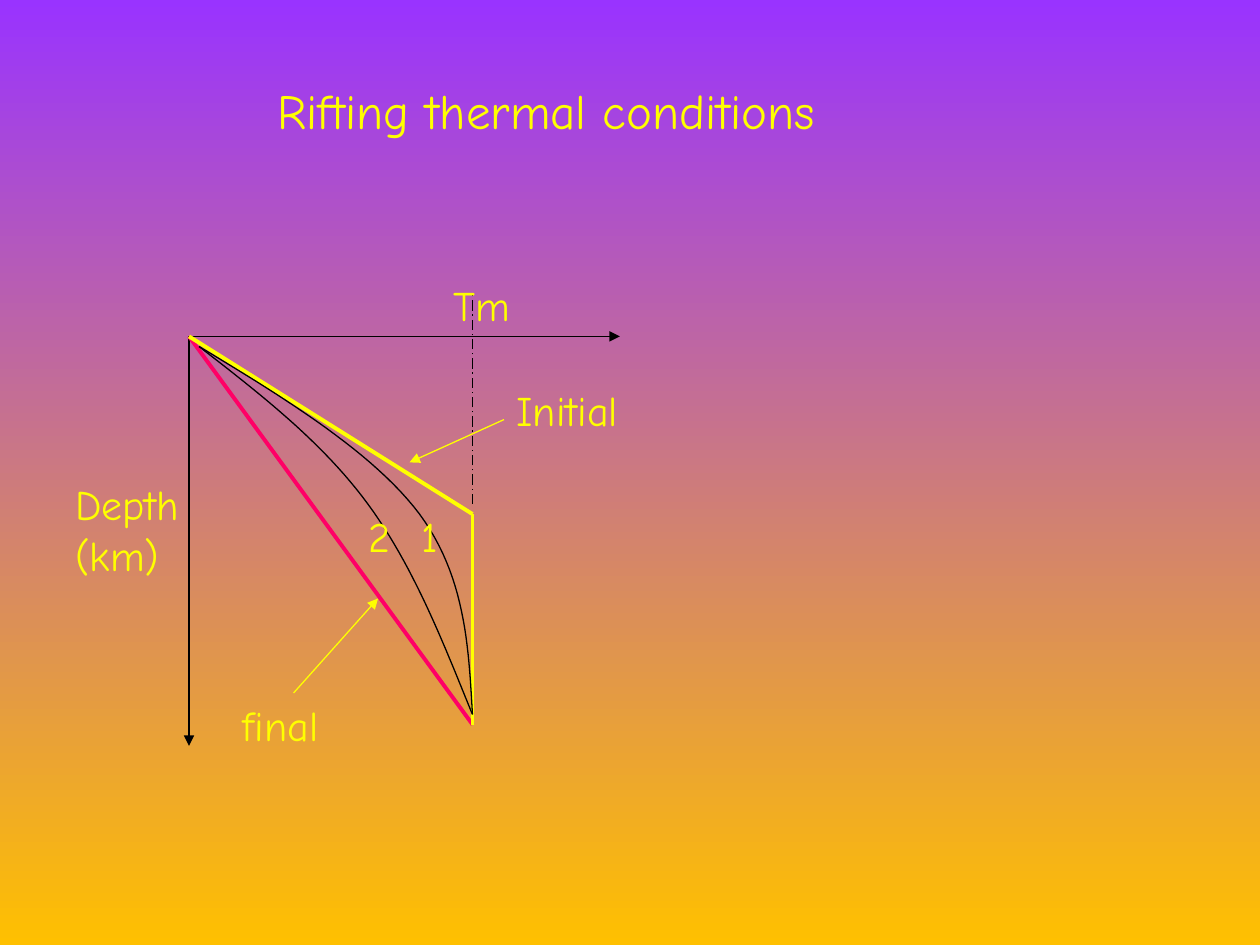
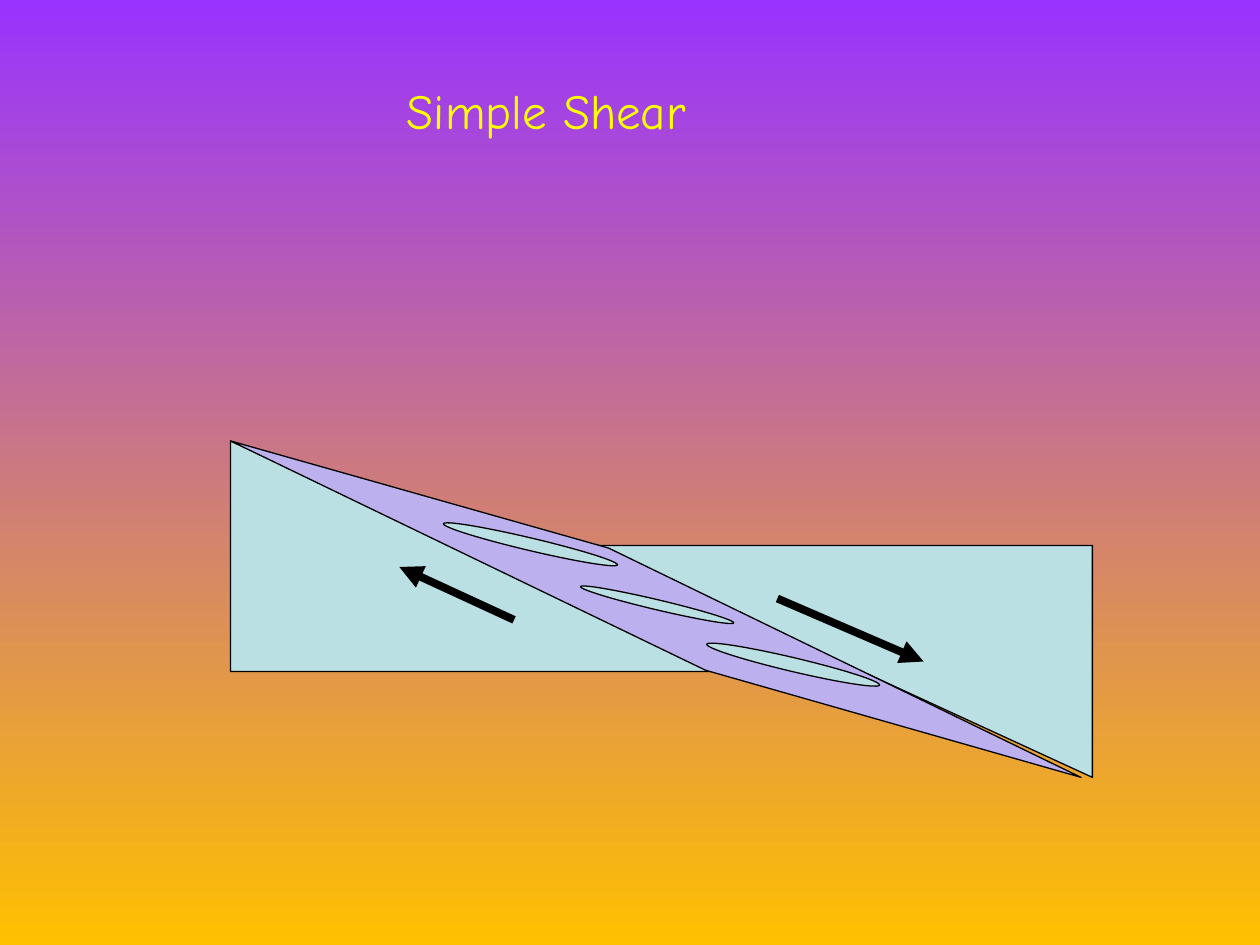
from dataclasses import dataclass

from lxml.etree import SubElement
from pptx import Presentation
from pptx.dml.color import RGBColor
from pptx.enum.dml import MSO_LINE_DASH_STYLE as Dash
from pptx.enum.shapes import MSO_CONNECTOR as ConnectorType, MSO_SHAPE as ShapeType
from pptx.enum.text import MSO_ANCHOR as Anchor, MSO_AUTO_SIZE as AutoSize, PP_ALIGN as Align
from pptx.oxml.ns import qn
from pptx.util import Inches, Pt

Point = tuple[float, float]

FONT = "Comic Neue"
YELLOW, BLACK, PINK = "FFFF00", "000000", "FF0066"
CRUST, SHEAR_ZONE = "BBE0E3", "BCB0EE"
SKY, GROUND = "9933FF", "FFC000"
THIN, BOLD, HEAVY = 0.75, 2.25, 4.5

ORIGIN = (1.5, 2.67)
MELT_KINK = (3.75, 4.08)
MELT_BASE = (3.75, 5.75)
CURVE_START, CURVE_END = (1.58, 2.75), (3.75, 5.67)
CURVE_STEPS = 24


@dataclass
class Line:
    start: Point
    end: Point
    color: str = BLACK
    width: float = THIN
    arrow: bool = False
    dash: Dash | None = None


@dataclass
class Label:
    text: str
    left: float
    top: float
    width: float
    height: float = 0.5
    wrap: bool = True


@dataclass
class Lens:
    left: float
    top: float
    width: float
    height: float


AXES_AND_GEOTHERMS = [
    Line(ORIGIN, (4.92, 2.67), arrow=True),
    Line(ORIGIN, (1.5, 5.92), arrow=True),
    Line(ORIGIN, MELT_BASE, PINK, BOLD),
    Line(ORIGIN, MELT_KINK, YELLOW, BOLD),
    Line(MELT_KINK, MELT_BASE, YELLOW, BOLD),
    Line((2.33, 5.5), (3, 4.75), YELLOW, arrow=True),
    Line((4, 3.33), (3.25, 3.67), YELLOW, arrow=True),
]
MELT_LINE = Line((3.75, 4), (3.75, 2.33), dash=Dash.LONG_DASH_DOT)
COOLING_CURVES = [
    [CURVE_START, (2.28, 3.17), (2.97, 3.6), (3.33, 4.08), (3.69, 4.57), (3.72, 5.12), CURVE_END],
    [CURVE_START, (2.07, 3.13), (2.56, 3.51), (2.92, 4), (3.28, 4.49), (3.51, 5.08), CURVE_END],
]
LABELS = [
    Label("final", 1.83, 5.5, 1.33),
    Label("Initial", 4, 3, 1.67),
    Label("1", 3.25, 4, 0.42),
    Label("2", 2.83, 4, 0.42),
    Label("Tm", 3.5, 2.17, 0.69, wrap=False),
    Label("Depth (km)", 0.5, 3.75, 1.17, 0.9),
]

BLOCKS = [
    ([(4.67, 4.33), (8.67, 4.33), (8.67, 6.17)], CRUST),
    ([(1.83, 3.5), (1.83, 5.33), (5.83, 5.33)], CRUST),
    ([(4.83, 4.35), (1.83, 3.5), (5.6, 5.32), (8.58, 6.17)], SHEAR_ZONE),
]
LENSES = [
    Lens(5.59, 5.22, 1.41, 0.11),
    Lens(4.59, 4.76, 1.25, 0.08),
    Lens(3.5, 4.27, 1.42, 0.1),
]
LENS_TILT = 13.3
SLIP_ARROWS = [
    Line((6.17, 4.75), (7.33, 5.25), width=HEAVY, arrow=True),
    Line((4.08, 4.92), (3.17, 4.5), width=HEAVY, arrow=True),
]


def rgb(color: str) -> RGBColor:
    return RGBColor.from_string(color)


def write_text(frame, text: str, *, size: float = 24, color: str = YELLOW, align: Align = Align.LEFT) -> None:
    paragraph = frame.paragraphs[0]
    paragraph.alignment = align
    run = paragraph.add_run()
    run.text = text
    run.font.name = FONT
    run.font.size = Pt(size)
    run.font.color.rgb = rgb(color)


def set_background(master) -> None:
    fill = master.background.fill
    fill.gradient()
    fill.gradient_angle = 270
    for stop, color, position in zip(fill.gradient_stops, (SKY, GROUND), (0, 1)):
        stop.color.rgb = rgb(color)
        stop.position = position


def add_titled_slide(presentation, text: str):
    slide = presentation.slides.add_slide(presentation.slide_layouts.get_by_name("Title Only"))
    title = slide.shapes.title
    title.left, title.top = Inches(0.5), Inches(0.33)
    title.width, title.height = Inches(7.67), Inches(1.08)
    title.text_frame.vertical_anchor = Anchor.MIDDLE
    write_text(title.text_frame, text, size=28, align=Align.CENTER)
    return slide


def add_line(slide, line: Line) -> None:
    ends = [Inches(value) for value in (*line.start, *line.end)]
    connector = slide.shapes.add_connector(ConnectorType.STRAIGHT, *ends)
    connector.line.color.rgb = rgb(line.color)
    connector.line.width = Pt(line.width)
    if line.dash is not None:
        connector.line.dash_style = line.dash
    properties = connector._element.spPr
    if line.arrow:
        SubElement(properties.find(qn("a:ln")), qn("a:tailEnd"), type="triangle")
    SubElement(properties, qn("a:effectLst"))


def add_label(slide, label: Label) -> None:
    place = [Inches(value) for value in (label.left, label.top, label.width, label.height)]
    frame = slide.shapes.add_textbox(*place).text_frame
    frame.word_wrap = label.wrap
    frame.auto_size = AutoSize.SHAPE_TO_FIT_TEXT
    write_text(frame, label.text)


def format_outline(shape, fill: str | None) -> None:
    shape.shadow.inherit = False
    shape.line.color.rgb = rgb(BLACK)
    shape.line.width = Pt(THIN)
    if fill is None:
        shape.fill.background()
    else:
        shape.fill.solid()
        shape.fill.fore_color.rgb = rgb(fill)


def add_freeform(slide, points: list[Point], fill: str | None = None) -> None:
    corners = [(Inches(x), Inches(y)) for x, y in points]
    builder = slide.shapes.build_freeform(*corners[0])
    builder.add_line_segments(corners[1:], close=fill is not None)
    format_outline(builder.convert_to_shape(), fill)


def add_lens(slide, lens: Lens) -> None:
    place = [Inches(value) for value in (lens.left, lens.top, lens.width, lens.height)]
    shape = slide.shapes.add_shape(ShapeType.OVAL, *place)
    shape.rotation = LENS_TILT
    format_outline(shape, CRUST)


def bezier_point(controls: list[Point], t: float) -> Point:
    weights = ((1 - t) ** 3, 3 * t * (1 - t) ** 2, 3 * t**2 * (1 - t), t**3)
    x, y = (sum(w * value for w, value in zip(weights, axis)) for axis in zip(*controls))
    return x, y


def smooth_curve(controls: list[Point]) -> list[Point]:
    points = [controls[0]]
    for first in range(0, len(controls) - 1, 3):
        section = controls[first:first + 4]
        points += [bezier_point(section, step / CURVE_STEPS) for step in range(1, CURVE_STEPS + 1)]
    return points


def build_thermal_slide(presentation) -> None:
    slide = add_titled_slide(presentation, "Rifting thermal conditions")
    for line in AXES_AND_GEOTHERMS:
        add_line(slide, line)
    for controls in COOLING_CURVES:
        add_freeform(slide, smooth_curve(controls))
    add_line(slide, MELT_LINE)
    for label in LABELS:
        add_label(slide, label)


def build_shear_slide(presentation) -> None:
    slide = add_titled_slide(presentation, "Simple Shear")
    for points, fill in BLOCKS:
        add_freeform(slide, points, fill)
    for arrow in SLIP_ARROWS:
        add_line(slide, arrow)
    for lens in LENSES:
        add_lens(slide, lens)


def main() -> None:
    presentation = Presentation()
    presentation.slide_width, presentation.slide_height = Inches(10), Inches(7.5)
    set_background(presentation.slide_master)
    build_thermal_slide(presentation)
    build_shear_slide(presentation)
    presentation.save("out.pptx")


if __name__ == "__main__":
    main()
